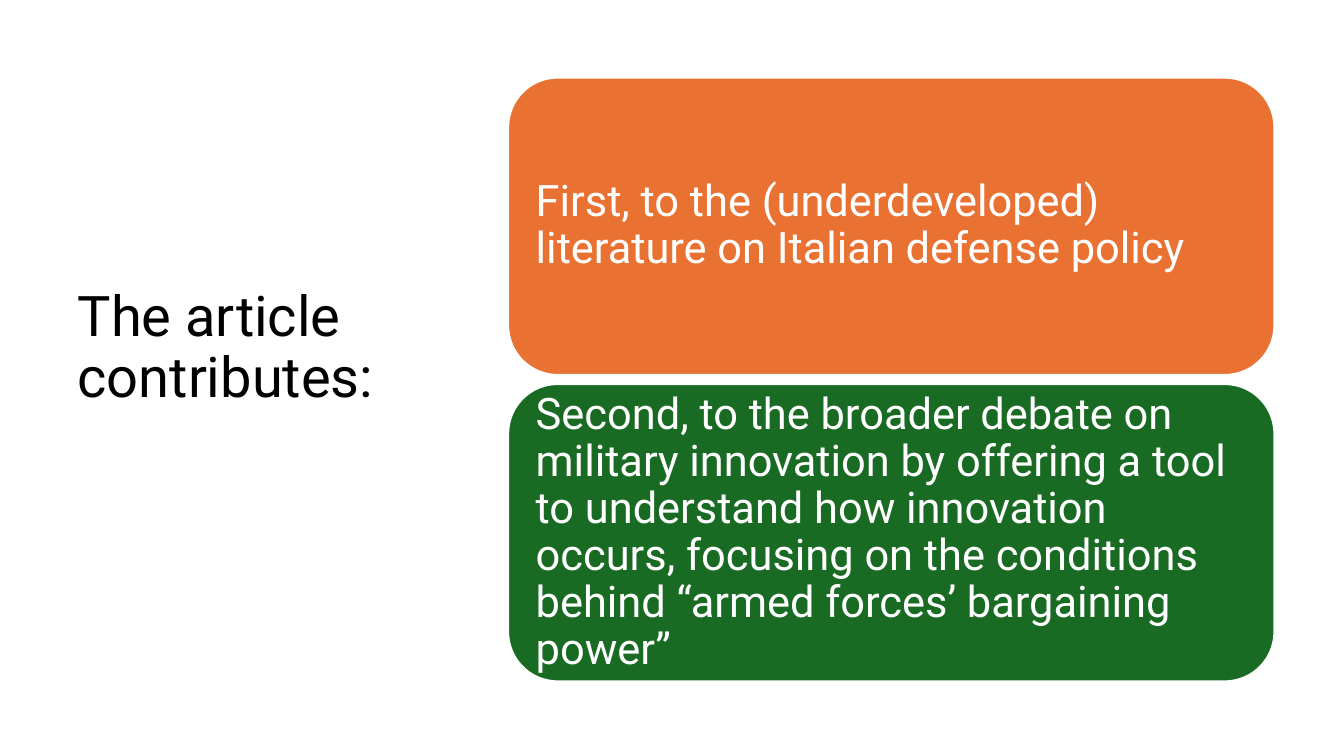
from pptx import Presentation
from pptx.dml.color import RGBColor
from pptx.enum.shapes import MSO_SHAPE
from pptx.enum.text import MSO_ANCHOR, MSO_AUTO_SIZE, PP_ALIGN
from pptx.util import Inches, Pt

ROUNDED = MSO_SHAPE.ROUNDED_RECTANGLE
MIDDLE = MSO_ANCHOR.MIDDLE
LEFT = PP_ALIGN.LEFT
NO_FIT = MSO_AUTO_SIZE.NONE
BLACK = RGBColor(0x00, 0x00, 0x00)
WHITE = RGBColor(0xFF, 0xFF, 0xFF)
ORANGE = RGBColor(0xE9, 0x71, 0x32)
GREEN = RGBColor(0x19, 0x6B, 0x24)

CARD_LEFT, CARD_TOP, CARD_WIDTH, CARD_HEIGHT = 5.04, 0.77, 7.6, 2.95
CARD_PITCH = 3.04
CARDS = [
    ("First, to the (underdeveloped) literature on Italian defense policy", ORANGE),
    ("Second, to the broader debate on military innovation by offering a tool "
     "to understand how innovation occurs, focusing on the conditions behind "
     "“armed forces’ bargaining power”", GREEN),
]


class SlideBuilder:
    """Holds the text style and the current slide, and adds its elements."""

    font = "Roboto"
    line_spacing = 0.9

    def __init__(self, s):
        self.s = s

    def set_text(self, tf, text, size, color):
        tf.text = text
        tf.word_wrap = True
        tf.auto_size = NO_FIT
        tf.vertical_anchor = MIDDLE
        p = tf.paragraphs[0]
        p.alignment = LEFT
        p.line_spacing = self.line_spacing
        for r in p.runs:
            r.font.name = self.font
            r.font.size = Pt(size)
            r.font.color.rgb = color

    def title(self, text, left, top, width, height):
        sp = self.s.shapes.title
        sp.left, sp.top = Inches(left), Inches(top)
        sp.width, sp.height = Inches(width), Inches(height)
        self.set_text(sp.text_frame, text, 40, BLACK)
        sp.text_frame.margin_bottom = Inches(0.66)

    def card(self, text, top, fill):
        sp = self.s.shapes.add_shape(
            ROUNDED, Inches(CARD_LEFT), Inches(top),
            Inches(CARD_WIDTH), Inches(CARD_HEIGHT))
        sp.shadow.inherit = False
        sp.fill.solid()
        sp.fill.fore_color.rgb = fill
        sp.line.color.rgb = WHITE
        sp.line.width = Pt(1.5)
        tf = sp.text_frame
        tf.margin_left = tf.margin_right = Inches(0.13)
        tf.margin_top = tf.margin_bottom = Inches(0.13)
        self.set_text(tf, text, 31, WHITE)


def main():
    prs = Presentation()
    prs.slide_width, prs.slide_height = Inches(13.33), Inches(7.5)
    slide = SlideBuilder(prs.slides.add_slide(prs.slide_layouts[5]))
    slide.title("The article contributes:", 0.67, 0.6, 3.82, 6.33)
    for i, (text, fill) in enumerate(CARDS):
        slide.card(text, CARD_TOP + i * CARD_PITCH, fill)
    prs.save("out.pptx")


if __name__ == "__main__":
    main()
